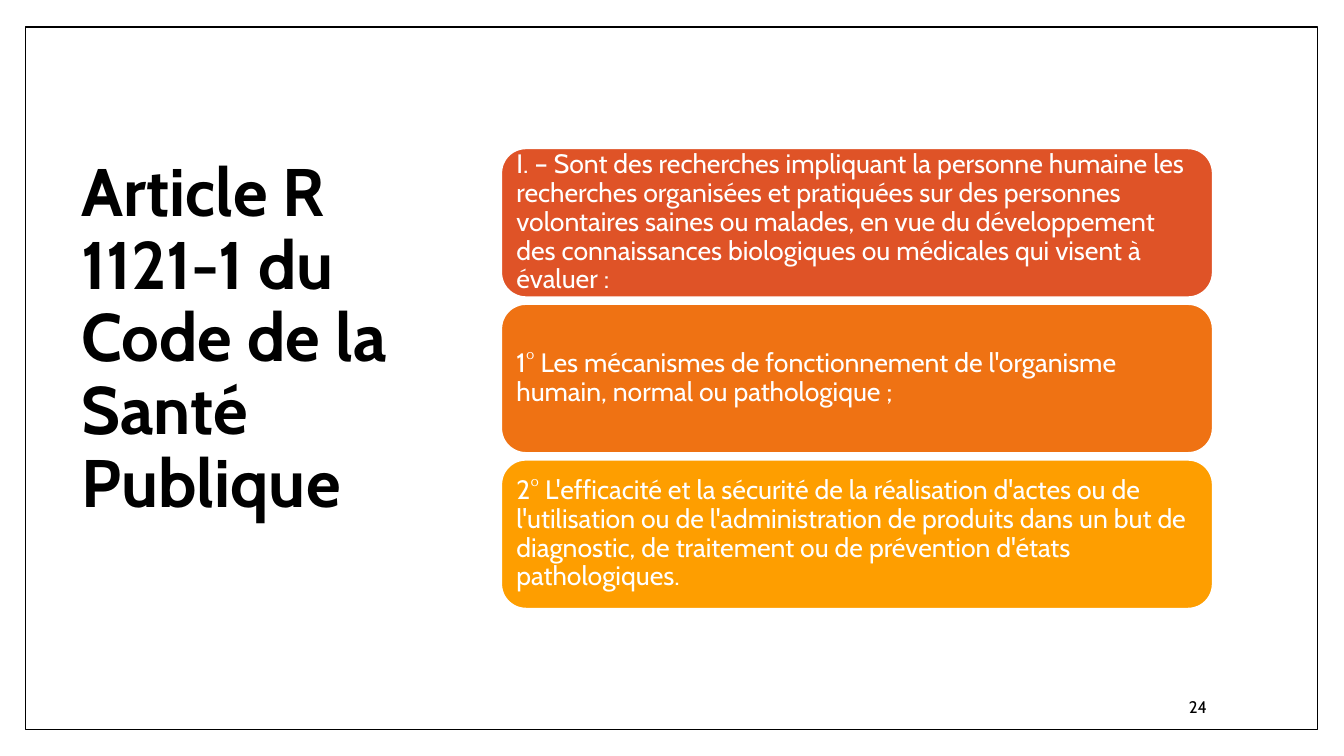
from pptx import Presentation
from pptx.dml.color import RGBColor
from pptx.enum.shapes import MSO_SHAPE as Shape
from pptx.enum.text import MSO_ANCHOR as Anchor, PP_ALIGN as Align
from pptx.util import Inches, Pt

COLORS = {
    "black": "000000",
    "white": "FFFFFF",
    "red": "DF5327",
    "orange": "EF7213",
    "amber": "FE9E00",
}
FONT = "Cabin"
TITLE = "Article R 1121-1 du Code de la Santé Publique"
CLAUSES = [
    ("red", "I. – Sont des recherches impliquant la personne humaine les recherches "
            "organisées et pratiquées sur des personnes volontaires saines ou malades, "
            "en vue du développement des connaissances biologiques ou médicales "
            "qui visent à évaluer :"),
    ("orange", "1° Les mécanismes de fonctionnement de l'organisme humain, "
               "normal ou pathologique ;"),
    ("amber", "2° L'efficacité et la sécurité de la réalisation d'actes ou de "
              "l'utilisation ou de l'administration de produits dans un but de "
              "diagnostic, de traitement ou de prévention d'états pathologiques."),
]
CLAUSE_TOP, CLAUSE_PITCH = 1.47, 1.545


def color(name):
    """Return the named colour."""
    return RGBColor.from_string(COLORS[name])


def apply(target, values):
    """Set each attribute of the target from a dict."""
    for name, value in values.items():
        setattr(target, name, value)


def write(shape, text, size, ink, insets=(0.1, 0.05, 0.1, 0.05), bold=False, **paragraph_format):
    """Write one vertically centred paragraph into a shape."""
    frame = shape.text_frame
    sides = ("margin_left", "margin_top", "margin_right", "margin_bottom")
    apply(frame, {"word_wrap": True, "vertical_anchor": Anchor.MIDDLE})
    apply(frame, {side: Inches(inset) for side, inset in zip(sides, insets)})
    paragraph = frame.paragraphs[0]
    apply(paragraph, {"alignment": Align.LEFT, **paragraph_format})
    run = paragraph.add_run()
    run.text = text
    apply(run.font, {"name": FONT, "size": Pt(size), "bold": bold})
    run.font.color.rgb = color(ink)


def add_panel(slide, kind, box, fill, line, width):
    """Add a filled and outlined shape without shadow."""
    shape = slide.shapes.add_shape(kind, *map(Inches, box))
    shape.shadow.inherit = False
    shape.fill.solid()
    shape.fill.fore_color.rgb = color(fill)
    shape.line.color.rgb = color(line)
    shape.line.width = Pt(width)
    return shape


def add_text(slide, box, text, size, **options):
    """Add a text box with black text."""
    textbox = slide.shapes.add_textbox(*map(Inches, box))
    write(textbox, text, size, "black", **options)


def main():
    """Build the slide and save it."""
    presentation = Presentation()
    apply(presentation, {"slide_width": Inches(13.33), "slide_height": Inches(7.5)})
    slide = presentation.slides.add_slide(presentation.slide_layouts[6])
    add_panel(slide, Shape.RECTANGLE, (0.25, 0.27, 12.82, 6.97), "white", "black", 1)
    add_text(slide, (0.71, 0.67, 3.68, 6.13), TITLE, 48, bold=True,
             insets=(0.1, 0.05, 0.1, 0.77), line_spacing=0.9)
    add_text(slide, (10.2, 6.81, 1.87, 0.4), "24", 12, alignment=Align.RIGHT)
    for index, (fill, text) in enumerate(CLAUSES):
        box = (4.97, CLAUSE_TOP + index * CLAUSE_PITCH, 7.06, 1.48)
        panel = add_panel(slide, Shape.ROUNDED_RECTANGLE, box, fill, "white", 1.5)
        write(panel, text, 19, "white", insets=(0.08,) * 4, line_spacing=0.9)
    presentation.save("out.pptx")


if __name__ == "__main__":
    main()
